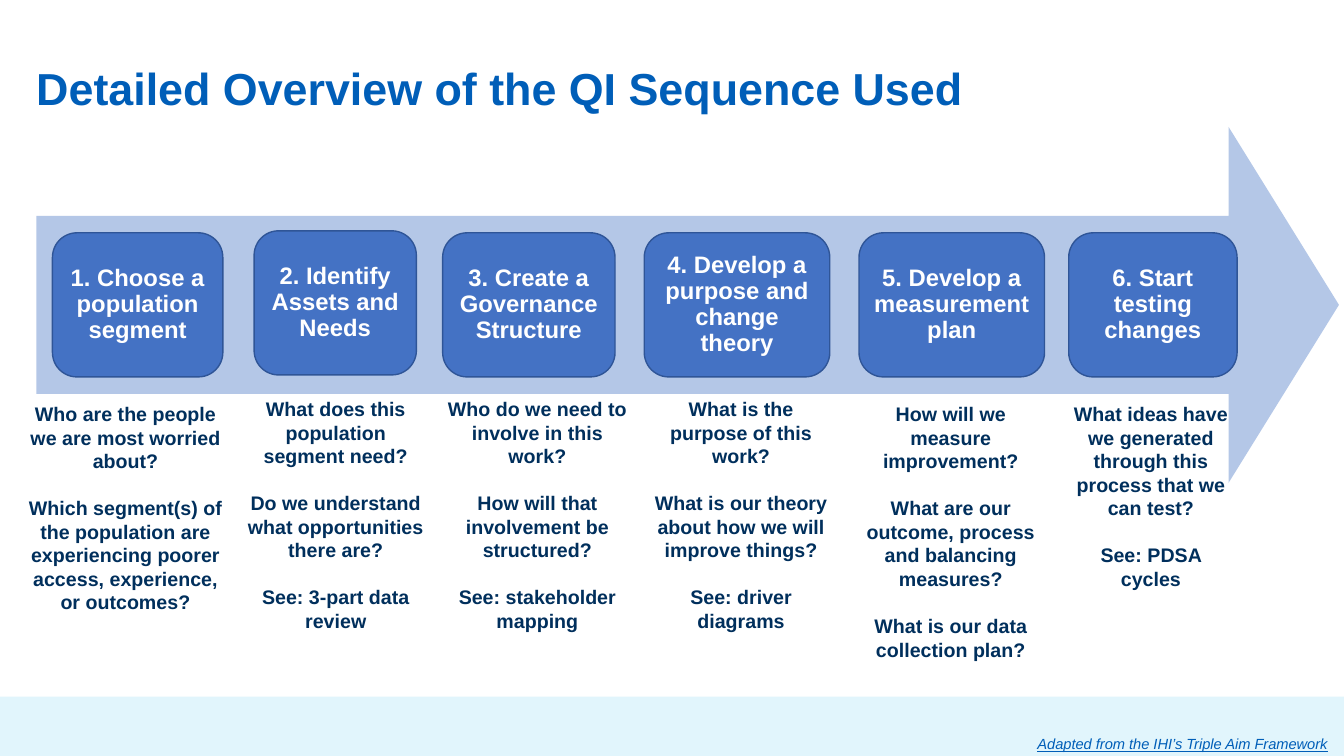
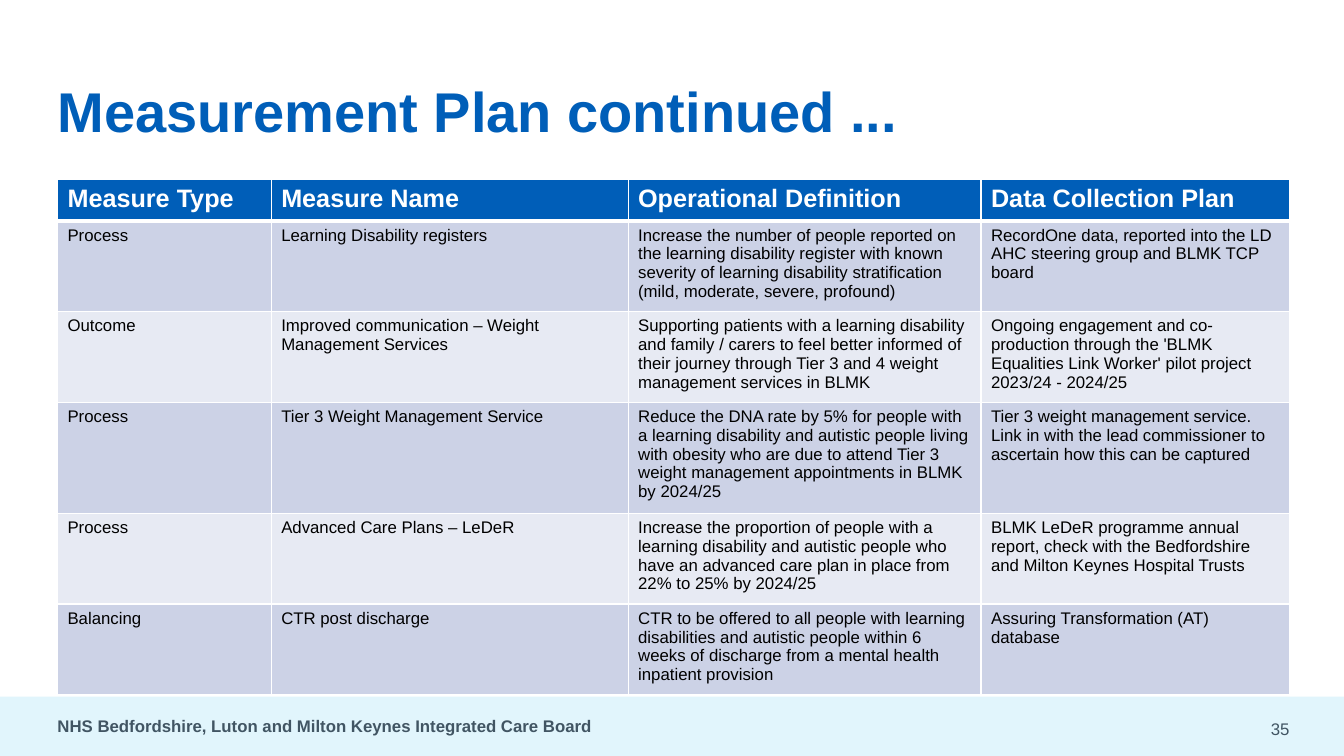
"""Build two slides: the QI sequence and its measurement plan."""
from dataclasses import dataclass

from lxml.etree import SubElement
from pptx import Presentation
from pptx.dml.color import RGBColor
from pptx.enum.shapes import MSO_SHAPE as Preset
from pptx.enum.text import MSO_ANCHOR as Anchor, PP_ALIGN as Align
from pptx.oxml.ns import qn
from pptx.util import Inches, Pt

FONT = "Arial"
WHITE = RGBColor(0xFF, 0xFF, 0xFF)
BLACK = RGBColor(0, 0, 0)
BLUE = RGBColor(0x00, 0x5E, 0xB8)
NAVY = RGBColor(0x00, 0x2F, 0x5C)
SLATE = RGBColor(0x41, 0x55, 0x63)
BAND = RGBColor(0xE1, 0xF5, 0xFC)
ARROW = RGBColor(0xB4, 0xC7, 0xE7)
STEP_FILL = RGBColor(0x44, 0x72, 0xC4)
STEP_LINE = RGBColor(0x2F, 0x55, 0x97)
ROW_FILLS = (RGBColor(0xCC, 0xD2, 0xE6), RGBColor(0xE7, 0xEA, 0xF3))

STEP_HEIGHT = 1.43
COLUMN_WIDTHS = (2.12, 3.54, 3.5, 3.06)
ROW_HEIGHTS = (0.41, 0.84, 0.84, 1.03, 0.84, 0.84)


@dataclass(frozen=True)
class Box:
    """Position and size in inches."""
    left: float
    top: float
    width: float
    height: float

    def lengths(self) -> tuple:
        """Return the four values as lengths."""
        return tuple(map(Inches, (self.left, self.top, self.width, self.height)))


@dataclass(frozen=True)
class Step:
    """One step of the sequence with the questions below it."""
    name: str
    box: Box
    questions_box: Box
    questions: tuple


STEPS = (
    Step("1. Choose a population segment",
         Box(0.52, 2.31, 1.69, STEP_HEIGHT), Box(0.14, 3.94, 2.21, 2.49),
         ("Who are the people we are most worried about?",
          "Which segment(s) of the population are experiencing poorer access, "
          "experience, or outcomes?")),
    Step("2. Identify Assets and Needs",
         Box(2.52, 2.29, 1.61, STEP_HEIGHT), Box(2.32, 3.89, 2.02, 2.46),
         ("What does this population segment need?",
          "Do we understand what opportunities there are?",
          "See: 3-part data review")),
    Step("3. Create a Governance Structure",
         Box(4.39, 2.31, 1.71, STEP_HEIGHT), Box(4.32, 3.89, 2.02, 2.46),
         ("Who do we need to involve in this work?",
          "How will that involvement be structured?",
          "See: stakeholder mapping")),
    Step("4. Develop a purpose and change theory",
         Box(6.39, 2.31, 1.84, STEP_HEIGHT), Box(6.34, 3.89, 2.02, 2.46),
         ("What is the purpose of this work?",
          "What is our theory about how we will improve things?",
          "See: driver diagrams")),
    Step("5. Develop a measurement plan",
         Box(8.52, 2.31, 1.84, STEP_HEIGHT), Box(8.42, 3.94, 2.02, 2.69),
         ("How will we measure improvement?",
          "What are our outcome, process and balancing measures?",
          "What is our data collection plan?")),
    Step("6. Start testing changes",
         Box(10.6, 2.31, 1.67, STEP_HEIGHT), Box(10.54, 3.94, 1.75, 1.99),
         ("What ideas have we generated through this process that we can test?",
          "See: PDSA cycles")),
)

MEASURES = (
    ("Measure Type", "Measure Name", "Operational Definition", "Data Collection Plan"),
    ("Process", "Learning Disability registers",
     "Increase the number of people reported on the learning disability register with "
     "known severity of learning disability stratification (mild, moderate, severe, "
     "profound)",
     "RecordOne data, reported into the LD AHC steering group and BLMK TCP board"),
    ("Outcome", "Improved communication – Weight Management Services",
     "Supporting patients with a learning disability and family / carers to feel better "
     "informed of their journey through Tier 3 and 4 weight management services in BLMK",
     "Ongoing engagement and co-production through the 'BLMK Equalities Link Worker' "
     "pilot project 2023/24 - 2024/25"),
    ("Process", "Tier 3 Weight Management Service",
     "Reduce the DNA rate by 5% for people with a learning disability and autistic people "
     "living with obesity who are due to attend Tier 3 weight management appointments in "
     "BLMK by 2024/25",
     "Tier 3 weight management service. Link in with the lead commissioner to ascertain "
     "how this can be captured"),
    ("Process", "Advanced Care Plans – LeDeR",
     "Increase the proportion of people with a learning disability and autistic people who "
     "have an advanced care plan in place from 22% to 25% by 2024/25",
     "BLMK LeDeR programme annual report, check with the Bedfordshire and Milton Keynes "
     "Hospital Trusts"),
    ("Balancing", "CTR post discharge",
     "CTR to be offered to all people with learning disabilities and autistic people within "
     "6 weeks of discharge from a mental health inpatient provision",
     "Assuring Transformation (AT) database"),
)


def write(frame, *texts: str, size: float, color: RGBColor, bold: bool = False,
          italic: bool = False, underline: bool = False, align=Align.LEFT,
          gap: float = 0, line_spacing: float = 1.0) -> None:
    """Fill a text frame with one paragraph per text."""
    for index, text in enumerate(texts):
        paragraph = frame.add_paragraph() if index else frame.paragraphs[0]
        paragraph.alignment = align
        paragraph.line_spacing = line_spacing
        if index:
            paragraph.space_before = Pt(gap)
        run = paragraph.add_run()
        run.text = text
        font = run.font
        font.name, font.size, font.color.rgb = FONT, Pt(size), color
        font.bold, font.italic, font.underline = bold, italic, underline


def set_frame(frame, inset: float, anchor=Anchor.MIDDLE) -> None:
    """Wrap a text frame and give it equal margins."""
    frame.word_wrap = True
    frame.vertical_anchor = anchor
    frame.margin_left = frame.margin_right = Inches(inset)
    frame.margin_top = frame.margin_bottom = Inches(inset)


def add_text(slide, box: Box, *texts: str, **style) -> None:
    """Add a middle-anchored text box without margins."""
    frame = slide.shapes.add_textbox(*box.lengths()).text_frame
    set_frame(frame, 0)
    write(frame, *texts, **style)


def add_preset(slide, preset, box: Box, fill: RGBColor, line: RGBColor | None = None):
    """Add a flat preset shape."""
    shape = slide.shapes.add_shape(preset, *box.lengths())
    shape.shadow.inherit = False
    shape.fill.solid()
    shape.fill.fore_color.rgb = fill
    if line is None:
        shape.line.fill.background()
    else:
        shape.line.color.rgb = line
        shape.line.width = Pt(1)
    return shape


def add_slide(deck, title: str, title_box: Box, title_size: float):
    """Add a blank slide with the footer band and the title."""
    slide = deck.slides.add_slide(deck.slide_layouts[6])
    add_preset(slide, Preset.RECTANGLE, Box(0, 6.91, 13.33, 0.59), BAND)
    add_text(slide, title_box, title, size=title_size, color=BLUE, bold=True)
    return slide


def add_step(slide, step: Step) -> None:
    """Draw a step and its questions."""
    tile = add_preset(slide, Preset.ROUNDED_RECTANGLE, step.box, STEP_FILL, STEP_LINE)
    tile.adjustments[0] = 0.17
    set_frame(tile.text_frame, 0.07)
    write(tile.text_frame, step.name, size=17, color=WHITE, bold=True,
          align=Align.CENTER, line_spacing=0.9)
    questions = slide.shapes.add_textbox(*step.questions_box.lengths()).text_frame
    questions.word_wrap = True
    write(questions, *step.questions, size=14, color=NAVY, bold=True,
          align=Align.CENTER, gap=16.8)


def set_borders(cell, bottom: float) -> None:
    """Give a cell white borders; bottom is the lower width in points."""
    properties = cell._tc.get_or_add_tcPr()
    sides = (("a:lnL", 1), ("a:lnR", 1), ("a:lnT", 1), ("a:lnB", bottom))
    for index, (side, width) in enumerate(sides):
        border = SubElement(properties, qn(side), w=str(Pt(width)))
        SubElement(SubElement(border, qn("a:solidFill")), qn("a:srgbClr"), val=str(WHITE))
        properties.insert(index, border)


def add_measures(slide) -> None:
    """Draw the measurement table."""
    box = Box(0.57, 1.78, sum(COLUMN_WIDTHS), sum(ROW_HEIGHTS))
    table = slide.shapes.add_table(len(MEASURES), len(COLUMN_WIDTHS), *box.lengths()).table
    for column, width in zip(table.columns, COLUMN_WIDTHS):
        column.width = Inches(width)
    for index, (row, height, texts) in enumerate(zip(table.rows, ROW_HEIGHTS, MEASURES)):
        row.height = Inches(height)
        header = index == 0
        for cell, text in zip(row.cells, texts):
            cell.fill.solid()
            cell.fill.fore_color.rgb = BLUE if header else ROW_FILLS[(index - 1) % 2]
            set_borders(cell, 3 if header else 1)
            write(cell.text_frame, text, size=18 if header else 12,
                  color=WHITE if header else BLACK, bold=header)


def main() -> None:
    """Build and save the deck."""
    deck = Presentation()
    deck.slide_width, deck.slide_height = Inches(13.33), Inches(7.5)

    sequence = add_slide(deck, "Detailed Overview of the QI Sequence Used",
                         Box(0.36, 0.26, 12.24, 1.22), 32)
    arrow = add_preset(sequence, Preset.RIGHT_ARROW, Box(0.36, 1.26, 12.92, 3.53), ARROW)
    arrow.adjustments[0], arrow.adjustments[1] = 0.5, 0.31
    for step in STEPS:
        add_step(sequence, step)
    add_text(sequence, Box(10.29, 7.25, 3, 0.25),
             "Adapted from the IHI’s Triple Aim Framework",
             size=10.5, color=BLUE, italic=True, underline=True)

    plan = add_slide(deck, "Measurement Plan continued ...", Box(0.57, 0.42, 9.64, 1.35), 40)
    add_measures(plan)
    add_text(plan, Box(0.57, 6.91, 8.1, 0.59),
             "NHS Bedfordshire, Luton and Milton Keynes Integrated Care Board",
             size=12, color=SLATE, bold=True)
    add_text(plan, Box(12.26, 6.95, 0.53, 0.55), "35",
             size=12, color=SLATE, align=Align.RIGHT)

    deck.save("out.pptx")


if __name__ == "__main__":
    main()
